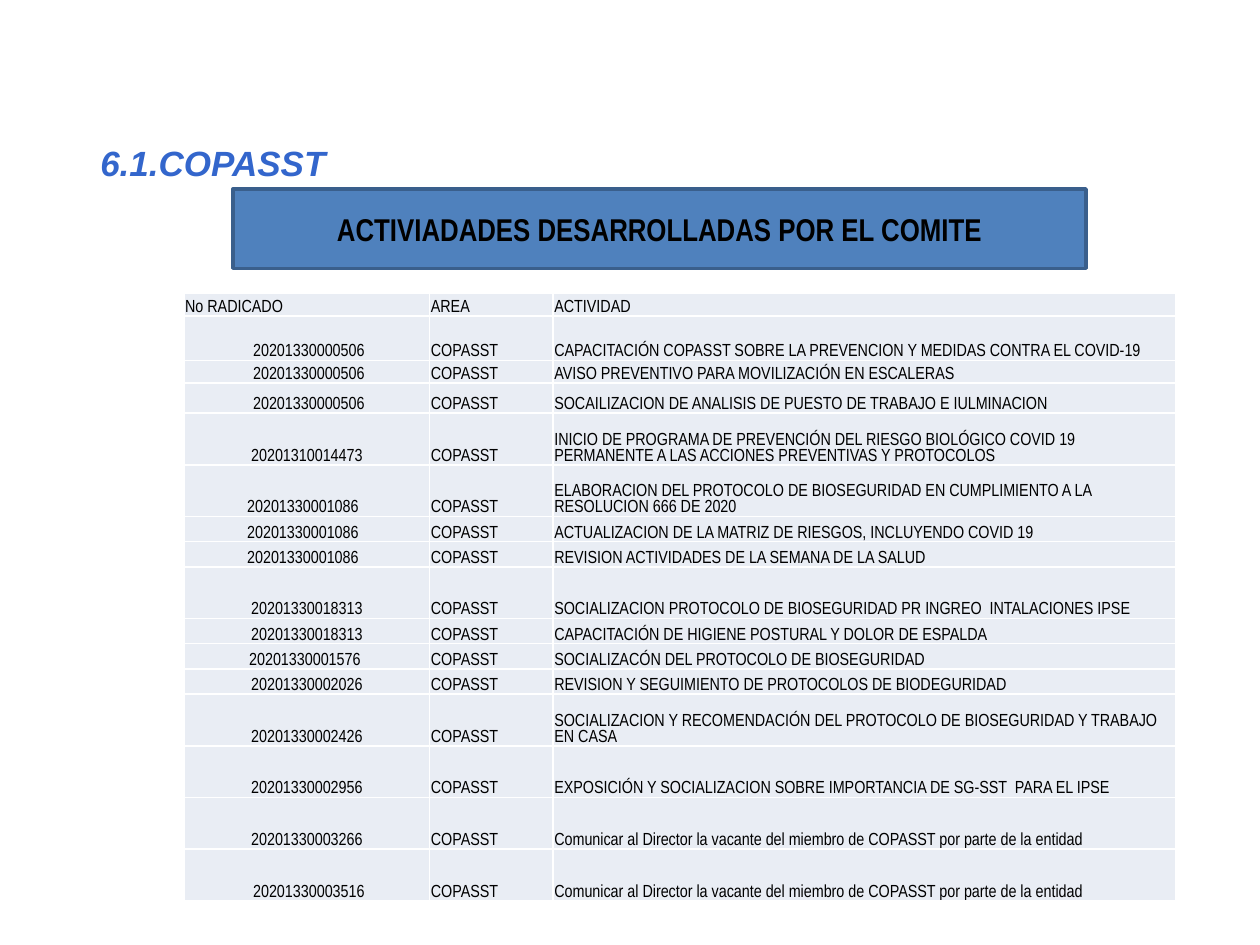
from lxml.etree import SubElement
from pptx import Presentation
from pptx.dml.color import RGBColor
from pptx.enum.shapes import MSO_SHAPE
from pptx.enum.text import MSO_ANCHOR as ANCHOR, PP_ALIGN as ALIGN
from pptx.oxml.ns import qn
from pptx.util import Inches, Pt

TITLE = dict(name="Arial", size=Pt(20), bold=True, italic=True)
BANNER = dict(name="Arial Narrow", size=Pt(18), bold=True)
BODY = dict(name="Arial Narrow", size=Pt(10), bold=False)
CELL = dict(margin_left=Inches(0.01), margin_right=Inches(0.01),
            margin_top=Inches(0.01), margin_bottom=0,
            vertical_anchor=ANCHOR.BOTTOM)

COL_WIDTHS = [1.95, 0.98, 4.94]
HEADER = ("No RADICADO", "AREA", "ACTIVIDAD")
HEADER_HEIGHT = 0.18
AREA = "COPASST"
VACANCY = "Comunicar al Director la vacante del miembro de COPASST por parte de la entidad"
# Row height, filing number (padded with no-break spaces), activity
ACTIVITIES = [
    (0.35, " 20201330000506", "CAPACITACIÓN COPASST SOBRE LA PREVENCION Y MEDIDAS CONTRA EL COVID-19"),
    (0.18, " 20201330000506", "AVISO PREVENTIVO PARA MOVILIZACIÓN EN ESCALERAS"),
    (0.24, " 20201330000506", "SOCAILIZACION DE ANALISIS DE PUESTO DE TRABAJO E IULMINACION"),
    (0.41, " 20201310014473 ", "INICIO DE PROGRAMA DE PREVENCIÓN DEL RIESGO BIOLÓGICO COVID 19 "
                               "PERMANENTE A LAS ACCIONES PREVENTIVAS Y PROTOCOLOS"),
    (0.41, "20201330001086  ", "ELABORACION DEL PROTOCOLO DE BIOSEGURIDAD EN CUMPLIMIENTO A LA "
                               "RESOLUCION 666 DE 2020"),
    (0.2, "20201330001086  ", "ACTUALIZACION DE LA MATRIZ DE RIESGOS, INCLUYENDO COVID 19"),
    (0.2, "20201330001086  ", "REVISION ACTIVIDADES DE LA SEMANA DE LA SALUD"),
    (0.41, " 20201330018313 ", "SOCIALIZACION PROTOCOLO DE BIOSEGURIDAD PR INGREO  INTALACIONES IPSE"),
    (0.2, " 20201330018313 ", "CAPACITACIÓN DE HIGIENE POSTURAL Y DOLOR DE ESPALDA"),
    (0.2, "20201330001576 ", "SOCIALIZACÓN DEL PROTOCOLO DE BIOSEGURIDAD"),
    (0.2, "20201330002026", "REVISION Y SEGUIMIENTO DE PROTOCOLOS DE BIODEGURIDAD"),
    (0.41, "20201330002426", "SOCIALIZACION Y RECOMENDACIÓN DEL PROTOCOLO DE BIOSEGURIDAD Y TRABAJO EN CASA"),
    (0.41, "20201330002956", "EXPOSICIÓN Y SOCIALIZACION SOBRE IMPORTANCIA DE SG-SST  PARA EL IPSE"),
    (0.41, "20201330003266", VACANCY),
    (0.41, " 20201330003516", VACANCY),
]


def rgb(color):
    return RGBColor.from_string(color)


def set_format(obj, values):
    for name, value in values.items():
        setattr(obj, name, value)


def write(tf, text, fmt, color, align):
    p = tf.paragraphs[0]
    p.alignment = align
    r = p.add_run()
    r.text = text
    set_format(r.font, fmt)
    r.font.color.rgb = rgb(color)


def add_title(s):
    sp = s.shapes.title
    set_format(sp, dict(left=Inches(-0.91), top=Inches(1.07),
                        width=Inches(5.2), height=Inches(0.44)))
    sp.text_frame.vertical_anchor = ANCHOR.TOP
    write(sp.text_frame, "6.1.COPASST", TITLE, "3366CC", ALIGN.CENTER)


def add_banner(s):
    sp = s.shapes.add_shape(MSO_SHAPE.RECTANGLE, Inches(1.85), Inches(1.5),
                            Inches(6.77), Inches(0.63))
    sp.shadow.inherit = False
    sp.fill.solid()
    sp.fill.fore_color.rgb = rgb("4F81BD")
    sp.line.color.rgb = rgb("3A5F8C")
    sp.line.width = Pt(2)
    sp.text_frame.vertical_anchor = ANCHOR.MIDDLE
    write(sp.text_frame, "ACTIVIADADES DESARROLLADAS POR EL COMITE", BANNER,
          "000000", ALIGN.CENTER)


def add_borders(cell, color, width):
    """Draw all four sides; border elements must come before the fill."""
    tc_pr = cell._tc.get_or_add_tcPr()
    for i, side in enumerate(("lnL", "lnR", "lnT", "lnB")):
        ln = SubElement(tc_pr, qn(f"a:{side}"), w=str(width))
        SubElement(SubElement(ln, qn("a:solidFill")), qn("a:srgbClr"), val=color)
        tc_pr.insert(i, ln)


def fill_cell(cell, text, align):
    set_format(cell, CELL)
    cell.fill.solid()
    cell.fill.fore_color.rgb = rgb("E9EDF4")
    add_borders(cell, "FFFFFF", Pt(1))
    write(cell.text_frame, text, BODY, "000000", align)


def add_activity_table(s):
    rows = [HEADER] + [(number, AREA, activity) for _, number, activity in ACTIVITIES]
    heights = [HEADER_HEIGHT] + [height for height, _, _ in ACTIVITIES]
    table = s.shapes.add_table(len(rows), len(COL_WIDTHS), Inches(1.46), Inches(2.33),
                               Inches(sum(COL_WIDTHS)), Inches(sum(heights))).table
    for col, width in zip(table.columns, COL_WIDTHS):
        col.width = Inches(width)
    for i, (row, height, texts) in enumerate(zip(table.rows, heights, rows)):
        row.height = Inches(height)
        for j, (cell, text) in enumerate(zip(row.cells, texts)):
            fill_cell(cell, text, ALIGN.CENTER if i and j == 0 else ALIGN.LEFT)


def main():
    prs = Presentation()
    prs.slide_width, prs.slide_height = Inches(10), Inches(7.5)
    s = prs.slides.add_slide(prs.slide_layouts[5])
    add_title(s)
    add_banner(s)
    add_activity_table(s)
    prs.save("out.pptx")


if __name__ == "__main__":
    main()
